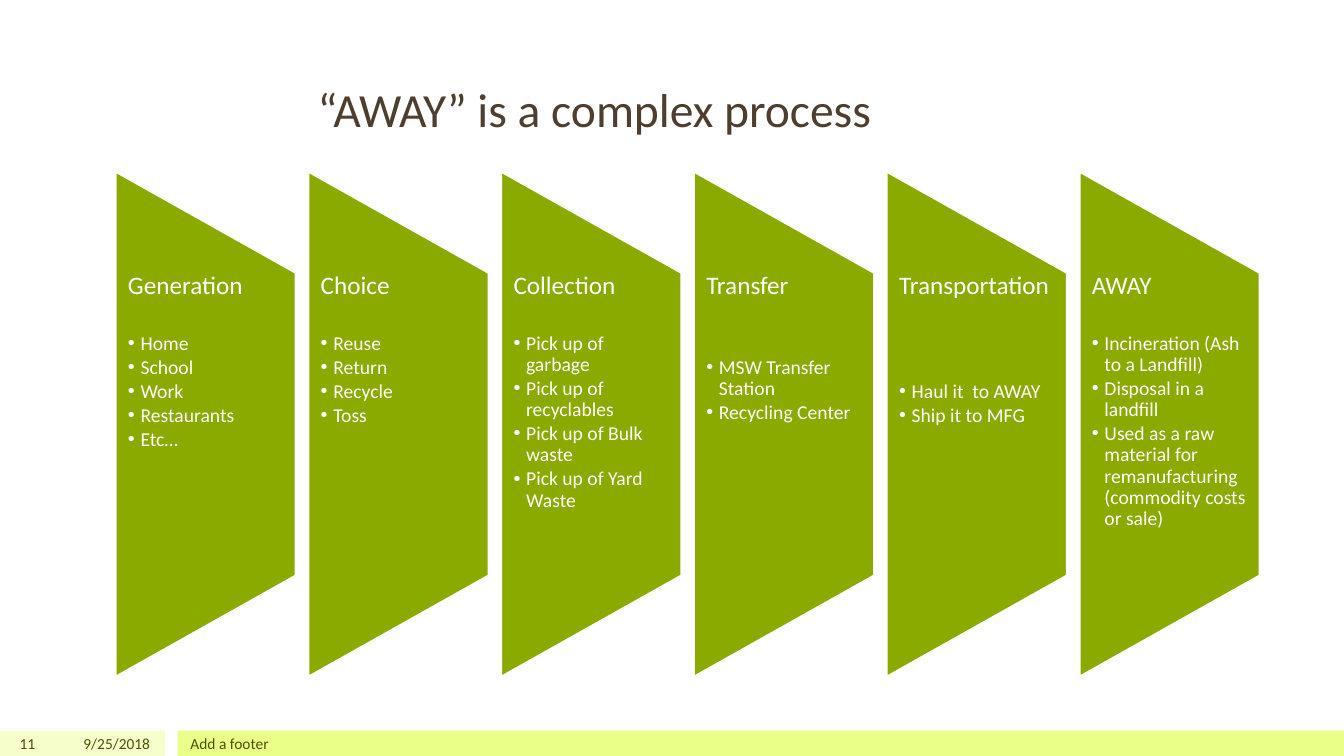
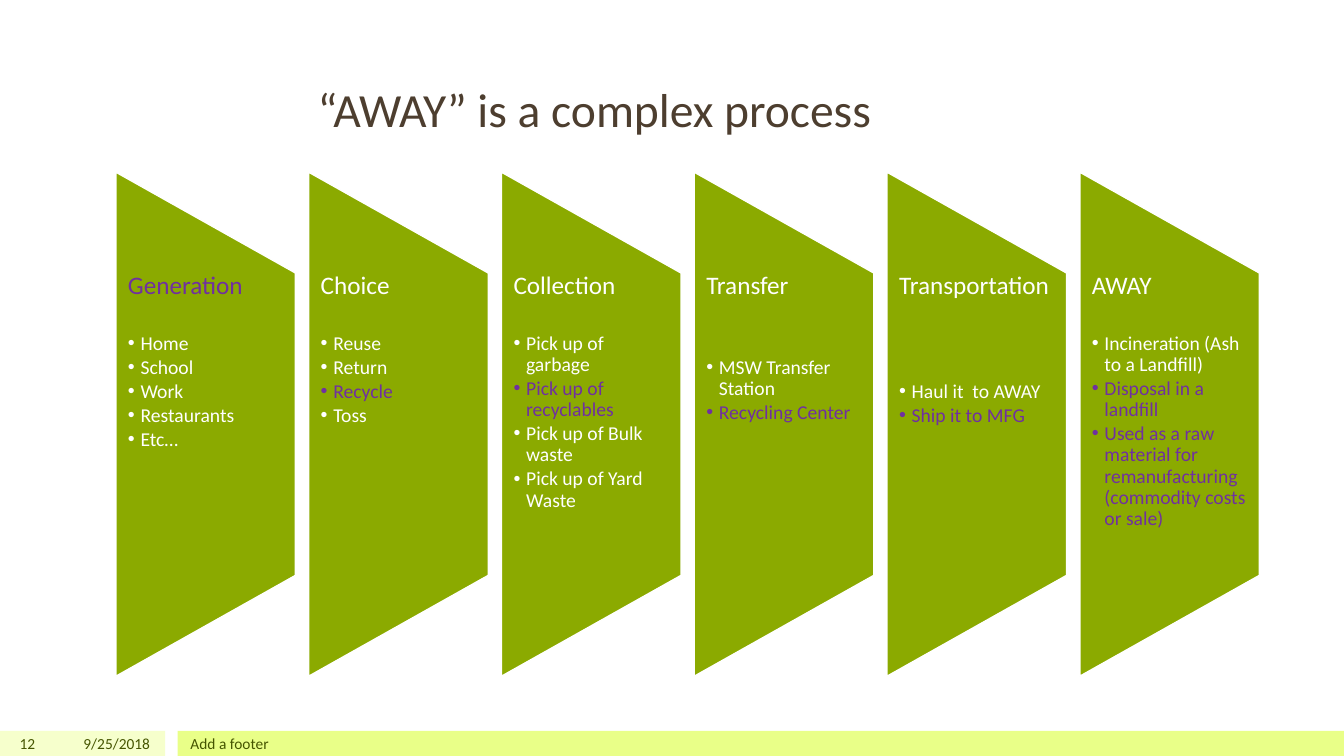
import copy

import pptx
import pptx.dml.color
import pptx.enum.shapes
import pptx.enum.text
import pptx.oxml
import pptx.oxml.ns
import pptx.util
from lxml import etree

Pt = pptx.util.Pt
RGBColor = pptx.dml.color.RGBColor
ANCHOR = pptx.enum.text.MSO_ANCHOR
ALIGN = pptx.enum.text.PP_ALIGN
SHAPE = pptx.enum.shapes.MSO_SHAPE
HOLDER = pptx.enum.shapes.PP_PLACEHOLDER

# Colours
WHITE = RGBColor(0xFF, 0xFF, 0xFF)
GREEN = RGBColor(0x8B, 0xAA, 0x00)
PURPLE = RGBColor(0x70, 0x30, 0xA0)
BROWN = RGBColor(0x4D, 0x3E, 0x2F)
OLIVE = RGBColor(0x45, 0x55, 0x00)
PALE_LIME = RGBColor(0xF6, 0xFF, 0xCC)
LIME = RGBColor(0xE9, 0xFF, 0x88)

# Text styles
FONT = "Calibri"
TITLE_FONT = {"name": FONT, "size": Pt(34), "bold": False}
FOOTER_FONT = {"name": FONT, "size": Pt(11)}
STAGE_FONT = {"name": FONT, "size": Pt(18)}
STEP_FONT = {"name": FONT, "size": Pt(14)}

# Layout as (left, top, width, height) in points
SLIDE_WIDTH, SLIDE_HEIGHT = 960, 540
TITLE_BOX = (219.6, 21.6, 629.3, 79.2)
FOOTER_TOP, FOOTER_HEIGHT = 522, 18
BANDS = [(0, 118, PALE_LIME), (127, 833, LIME)]
FOOTERS = {
    HOLDER.SLIDE_NUMBER: (0, 32.4, ALIGN.RIGHT),
    HOLDER.DATE: (36, 78.5, ALIGN.RIGHT),
    HOLDER.FOOTER: (128.9, 720, ALIGN.LEFT),
}
PROCESS_BOX = (82.8, 123, 816.7, 360)
STAGE_GAP = 9.5
STEP_PITCH = 17.2

# Content: stage, rows left free above its steps, steps
TITLE = "“AWAY” is a complex process"
STAGES = [
    ("Generation", 1, ["Home", "School", "Work", "Restaurants", "Etc…"]),
    ("Choice", 1, ["Reuse", "Return", "Recycle", "Toss"]),
    ("Collection", 1, ["Pick up of garbage", "Pick up of recyclables",
                       "Pick up of Bulk waste", "Pick up of Yard Waste"]),
    ("Transfer", 2, ["MSW Transfer Station", "Recycling Center"]),
    ("Transportation", 3, ["Haul it  to AWAY", "Ship it to MFG"]),
    ("AWAY", 1, ["Incineration (Ash to a Landfill)", "Disposal in a landfill",
                 "Used as a raw material for remanufacturing "
                 "(commodity costs or sale)"]),
]
HIGHLIGHTS = {"Generation", "Recycle", "Pick up of recyclables",
              "Recycling Center", "Ship it to MFG", *STAGES[-1][2][1:]}
PAGES = [("11", set()), ("12", HIGHLIGHTS)]


def apply(target, values):
    for attribute, value in values.items():
        setattr(target, attribute, value)


def place(shape, left, top, width, height):
    apply(shape, {"left": Pt(left), "top": Pt(top),
                  "width": Pt(width), "height": Pt(height)})


def write(paragraph, text, font, color, **layout):
    run = paragraph.add_run()
    run.text = text
    apply(run.font, font)
    run.font.color.rgb = color
    apply(paragraph, layout)


def add_bullet(paragraph):
    props = paragraph._p.get_or_add_pPr()
    props.set("marL", str(Pt(9)))
    props.set("indent", str(-Pt(9)))
    for tag, key, value in (("a:buFont", "typeface", "Arial"),
                            ("a:buChar", "char", "•")):
        etree.SubElement(props, pptx.oxml.ns.qn(tag)).set(key, value)


def add_bands(slide, layout):
    """Draw the footer bands and hand them to the shared layout."""
    for position, (left, width, color) in enumerate(BANDS):
        band = slide.shapes.add_shape(
            SHAPE.RECTANGLE, Pt(left), Pt(FOOTER_TOP), Pt(width), Pt(FOOTER_HEIGHT))
        band.shadow.inherit = False
        band.fill.solid()
        band.fill.fore_color.rgb = color
        band.line.fill.background()
        layout.shapes.element.insert(2 + position, band.element)


def add_title(slide, box):
    title = slide.shapes.title
    place(title, *box)
    frame = title.text_frame
    apply(frame, {"word_wrap": True, "vertical_anchor": ANCHOR.BOTTOM,
                  "auto_size": pptx.enum.text.MSO_AUTO_SIZE.NONE,
                  "margin_bottom": Pt(2)})
    write(frame.paragraphs[0], TITLE, TITLE_FONT, BROWN,
          alignment=ALIGN.LEFT, line_spacing=0.9)


def add_footers(slide, layout, number):
    texts = {HOLDER.SLIDE_NUMBER: number, HOLDER.DATE: "9/25/2018",
             HOLDER.FOOTER: "Add a footer"}
    for holder in layout.placeholders:
        kind = holder.placeholder_format.type
        if kind not in FOOTERS:
            continue
        slide.shapes.element.append(copy.deepcopy(holder.element))
        footer = slide.placeholders[holder.placeholder_format.idx]
        left, width, alignment = FOOTERS[kind]
        place(footer, left, FOOTER_TOP, width, FOOTER_HEIGHT)
        frame = footer.text_frame
        frame.text = ""
        apply(frame, {"word_wrap": True, "vertical_anchor": ANCHOR.MIDDLE})
        write(frame.paragraphs[0], texts[kind], FOOTER_FONT, OLIVE,
              alignment=alignment)


def add_stage(slide, box, stage, free_rows, steps, highlights):
    left, top, width, height = box

    # Panel: a quarter-turned trapezoid around the centre of the box
    panel = slide.shapes.add_shape(
        SHAPE.FLOWCHART_MANUAL_OPERATION,
        Pt(left + (width - height) / 2), Pt(top + (height - width) / 2),
        Pt(height), Pt(width))
    panel.rotation = 270
    panel.shadow.inherit = False
    panel.fill.solid()
    panel.fill.fore_color.rgb = GREEN
    panel.line.color.rgb = WHITE
    panel.line.width = Pt(1)

    # Stage name and steps in the middle three fifths
    label = slide.shapes.add_textbox(
        Pt(left), Pt(top + height / 5), Pt(width), Pt(height * 3 / 5))
    frame = label.text_frame
    apply(frame, {"word_wrap": True, "margin_left": Pt(8.6), "margin_right": Pt(8.6),
                  "margin_top": 0, "margin_bottom": 0})

    def color(text):
        return PURPLE if text in highlights else WHITE

    write(frame.paragraphs[0], stage, STAGE_FONT, color(stage),
          line_spacing=0.9, space_after=Pt(6.3 + free_rows * STEP_PITCH))
    for step in steps:
        paragraph = frame.add_paragraph()
        write(paragraph, step, STEP_FONT, color(step),
              line_spacing=0.9, space_after=Pt(2.1))
        add_bullet(paragraph)


def add_process(slide, box, highlights):
    left, top, width, height = box
    stage_width = (width - STAGE_GAP * (len(STAGES) - 1)) / len(STAGES)
    for column, (stage, free_rows, steps) in enumerate(STAGES):
        stage_left = left + column * (stage_width + STAGE_GAP)
        add_stage(slide, (stage_left, top, stage_width, height),
                  stage, free_rows, steps, highlights)


def main():
    deck = pptx.Presentation()
    apply(deck, {"slide_width": Pt(SLIDE_WIDTH), "slide_height": Pt(SLIDE_HEIGHT)})
    layout = deck.slide_layouts.get_by_name("Title Only")
    for index, (number, highlights) in enumerate(PAGES):
        slide = deck.slides.add_slide(layout)
        if index == 0:
            add_bands(slide, layout)
        add_title(slide, TITLE_BOX)
        add_footers(slide, layout, number)
        add_process(slide, PROCESS_BOX, highlights)
    deck.save("out.pptx")


if __name__ == "__main__":
    main()
